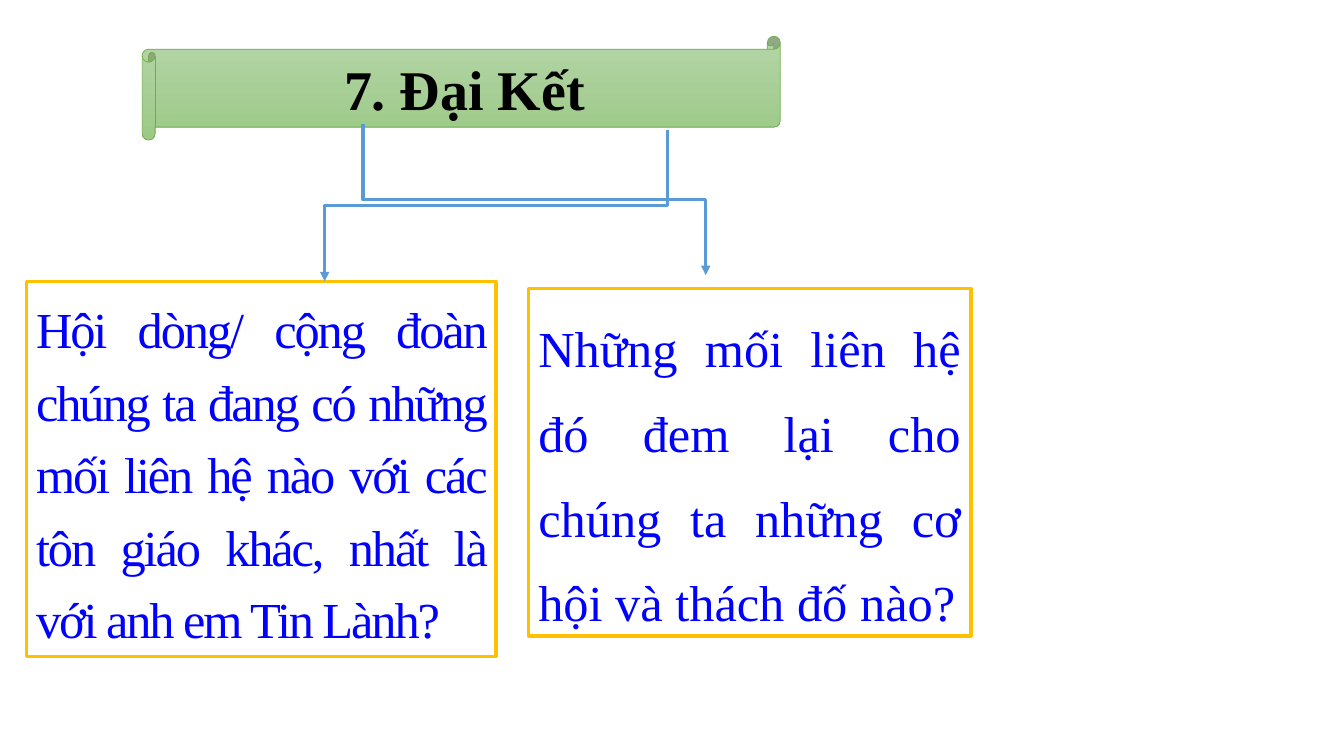
from lxml import etree
from pptx import Presentation
from pptx.dml.color import RGBColor
from pptx.enum.shapes import MSO_CONNECTOR, MSO_SHAPE
from pptx.enum.text import MSO_ANCHOR, MSO_AUTO_SIZE, PP_ALIGN
from pptx.oxml.ns import qn
from pptx.util import Inches, Pt

RECTANGLE, SCROLL = MSO_SHAPE.RECTANGLE, MSO_SHAPE.HORIZONTAL_SCROLL
ELBOW = MSO_CONNECTOR.ELBOW
TOP, MIDDLE = MSO_ANCHOR.TOP, MSO_ANCHOR.MIDDLE
CENTER, JUSTIFY = PP_ALIGN.CENTER, PP_ALIGN.JUSTIFY
FIT_SHAPE = MSO_AUTO_SIZE.SHAPE_TO_FIT_TEXT

COLORS = {
    "paper": "FFFFFF", "frame": "FFC000", "question": "0000FF",
    "heading": "000000", "scroll_top": "B5D5A7", "scroll_bottom": "9CC987",
    "scroll_edge": "70AD47", "arrow": "5B9BD5",
}
FONT = "Times New Roman"
CELL = Inches(0.1)


def color(key):
    return RGBColor.from_string(COLORS[key])


def add_panel(kind, grid, text, size, ink, edge, edge_width, align, anchor):
    panel = slide.shapes.add_shape(kind, *(round(n * CELL) for n in grid))
    panel.shadow.inherit = False
    panel.line.color.rgb = color(edge)
    panel.line.width = Pt(edge_width)
    frame = panel.text_frame
    frame.word_wrap = True
    frame.auto_size = FIT_SHAPE
    frame.vertical_anchor = anchor
    paragraph = frame.paragraphs[0]
    paragraph.text = text
    paragraph.alignment = align
    paragraph.font.name = FONT
    paragraph.font.size = Pt(size)
    paragraph.font.color.rgb = color(ink)
    return panel, paragraph


deck = Presentation()
deck.slide_width, deck.slide_height = Inches(13.33), Inches(7.5)
slide = deck.slides.add_slide(deck.slide_layouts[6])

banner, heading = add_panel(SCROLL, (14.1, 3.6, 63.3, 10.3), "7. Đại Kết", 40,
                            "heading", "scroll_edge", 0.5, CENTER, MIDDLE)
heading.font.bold = True
banner.fill.gradient()
banner.fill.gradient_angle = 270
for stop, key in zip(banner.fill.gradient_stops, ("scroll_top", "scroll_bottom")):
    stop.color.rgb = color(key)

questions = [
    ((52.4, 28.6, 43.9, 34.5), 1.4, 0,
     "Những mối liên hệ đó đem lại cho chúng ta những cơ hội và thách đố nào?"),
    ((2.6, 27.9, 46.6, 37.2), 1.2, -1.5,
     "Hội dòng/ cộng đoàn chúng ta đang có những mối liên hệ nào với các "
     "tôn giáo khác, nhất là với anh em Tin Lành?"),
]
for grid, line_spacing, letter_spacing, text in questions:
    box, question = add_panel(RECTANGLE, grid, text, 36, "question",
                              "frame", 2.25, JUSTIFY, TOP)
    box.fill.solid()
    box.fill.fore_color.rgb = color("paper")
    question.line_spacing = line_spacing
    if letter_spacing:
        run_format = question.runs[0].font
        run_format.language_id = None
        question.runs[0]._r.get_or_add_rPr().set("spc", str(int(letter_spacing * 100)))

DROP, SPAN = 15, 34
for start_column, start_row, direction in [(36, 12.3, 1), (66.2, 12.9, -1)]:
    middle_column = start_column + direction * SPAN / 2
    middle_row = start_row + DROP / 2
    begin_column = middle_column + direction * DROP / 2
    end_column = middle_column - direction * DROP / 2
    ends = (begin_column, middle_row - SPAN / 2, end_column, middle_row + SPAN / 2)
    arrow = slide.shapes.add_connector(ELBOW, *(round(n * CELL) for n in ends))
    arrow.line.color.rgb = color("arrow")
    arrow.line.width = Pt(2.25)
    properties = arrow._element.spPr
    properties.find(qn("a:xfrm")).set("rot", str((180 + direction * 90) * 60000))
    line = properties.find(qn("a:ln"))
    etree.SubElement(line, qn("a:tailEnd"), type="triangle")
    etree.SubElement(properties, qn("a:effectLst"))

deck.save("out.pptx")
